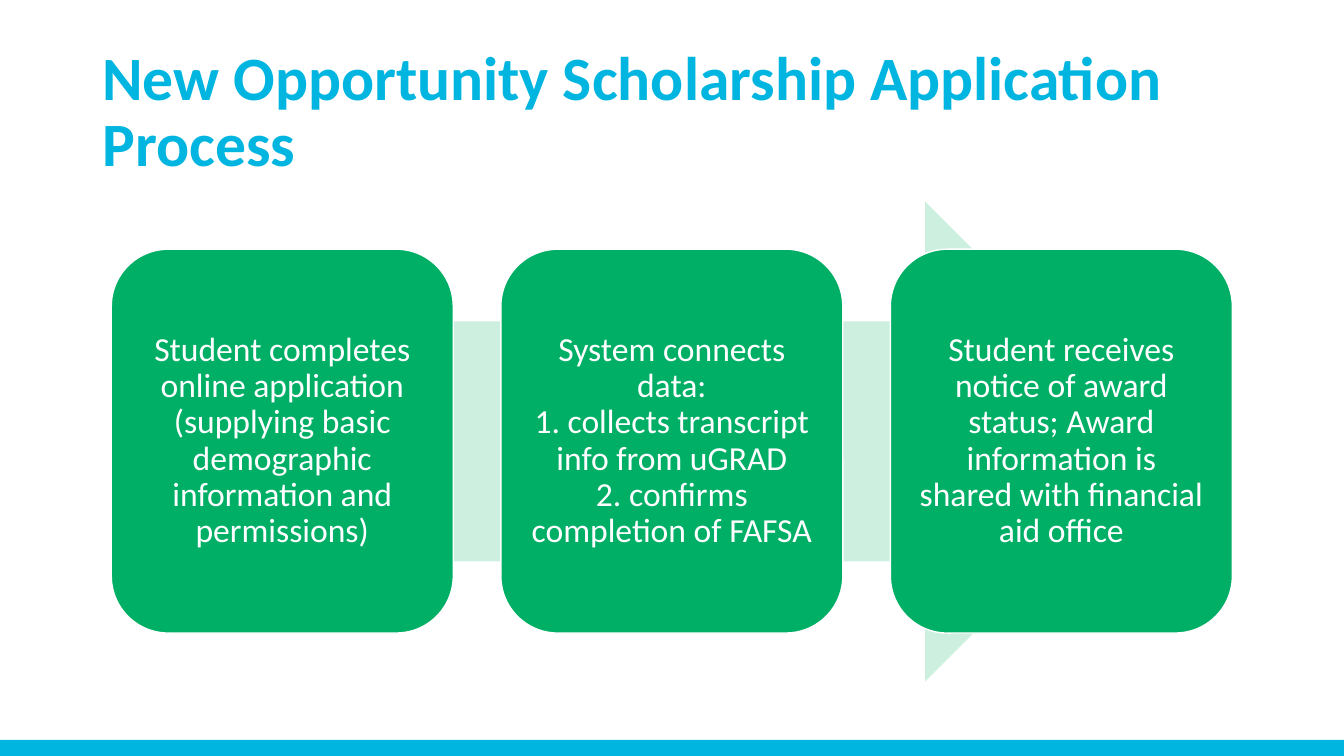
from dataclasses import dataclass

import lxml.etree
import pptx
import pptx.dml.color
import pptx.enum.shapes
import pptx.enum.text
import pptx.oxml.ns
import pptx.shapes.autoshape
import pptx.slide
import pptx.text.text
import pptx.util


@dataclass(frozen=True)
class Theme:
    font: str = "Calibri"
    blue: str = "00B5DF"
    green: str = "00AF66"
    white: str = "FFFFFF"
    title_size: float = 44
    step_size: float = 24
    line_spacing: float = 0.9
    arrow_opacity: int = 20


@dataclass(frozen=True)
class Box:
    left: float
    top: float
    width: float
    height: float


@dataclass(frozen=True)
class Step:
    lines: tuple[str, ...]


THEME = Theme()
SLIDE = Box(0, 0, 960, 540)
FOOTER_BAR = Box(0, 528.5, 960, 11.5)
TITLE = Box(66, 28.75, 828, 104.4)
ARROW = Box(128.2, 144, 704, 342.7)
FIRST_STEP = Box(79.5, 178, 244.3, 274.2)
STEP_PITCH = 278.25
STEP_INSET = 7.2

STEPS = (
    Step(("Student completes online application (supplying basic demographic information and permissions)",)),
    Step((
        "System connects data:",
        "1. collects transcript info from uGRAD",
        "2. confirms completion of FAFSA",
    )),
    Step(("Student receives notice of award status; Award information is shared with financial aid office",)),
)


def color(value: str) -> pptx.dml.color.RGBColor:
    return pptx.dml.color.RGBColor.from_string(value)


def add_filled_shape(
    slide: pptx.slide.Slide,
    kind: pptx.enum.shapes.MSO_SHAPE,
    box: Box,
    fill: str,
) -> pptx.shapes.autoshape.Shape:
    shape = slide.shapes.add_shape(
        kind,
        pptx.util.Pt(box.left),
        pptx.util.Pt(box.top),
        pptx.util.Pt(box.width),
        pptx.util.Pt(box.height),
    )
    shape.shadow.inherit = False
    shape.fill.solid()
    shape.fill.fore_color.rgb = color(fill)
    shape.line.fill.background()
    return shape


def set_opacity(shape: pptx.shapes.autoshape.Shape, percent: int) -> None:
    solid_fill = shape.element.spPr.find(pptx.oxml.ns.qn("a:solidFill"))
    fill_color = solid_fill.find(pptx.oxml.ns.qn("a:srgbClr"))
    alpha = lxml.etree.SubElement(fill_color, pptx.oxml.ns.qn("a:alpha"))
    alpha.set("val", str(percent * 1000))


def add_run(
    paragraph: pptx.text.text._Paragraph,
    text: str,
    size: float,
    text_color: str,
    bold: bool = False,
) -> None:
    run = paragraph.add_run()
    run.text = text
    run.font.name = THEME.font
    run.font.size = pptx.util.Pt(size)
    run.font.bold = bold
    run.font.color.rgb = color(text_color)


def set_title(slide: pptx.slide.Slide, text: str) -> None:
    title = slide.shapes.title
    title.left = pptx.util.Pt(TITLE.left)
    title.top = pptx.util.Pt(TITLE.top)
    title.width = pptx.util.Pt(TITLE.width)
    title.height = pptx.util.Pt(TITLE.height)
    frame = title.text_frame
    frame.word_wrap = True
    frame.auto_size = pptx.enum.text.MSO_AUTO_SIZE.NONE
    frame.vertical_anchor = pptx.enum.text.MSO_ANCHOR.MIDDLE
    paragraph = frame.paragraphs[0]
    paragraph.alignment = pptx.enum.text.PP_ALIGN.LEFT
    paragraph.line_spacing = THEME.line_spacing
    add_run(paragraph, text, THEME.title_size, THEME.blue, bold=True)


def add_step(slide: pptx.slide.Slide, step: Step, box: Box) -> None:
    shape = add_filled_shape(
        slide, pptx.enum.shapes.MSO_SHAPE.ROUNDED_RECTANGLE, box, THEME.green
    )
    shape.line.color.rgb = color(THEME.white)
    shape.line.width = pptx.util.Pt(1)
    frame = shape.text_frame
    frame.word_wrap = True
    frame.vertical_anchor = pptx.enum.text.MSO_ANCHOR.MIDDLE
    inset = pptx.util.Pt(STEP_INSET)
    frame.margin_left = frame.margin_right = inset
    frame.margin_top = frame.margin_bottom = inset
    paragraph = frame.paragraphs[0]
    paragraph.alignment = pptx.enum.text.PP_ALIGN.CENTER
    paragraph.line_spacing = THEME.line_spacing
    for index, line in enumerate(step.lines):
        if index:
            paragraph.add_line_break()
        add_run(paragraph, line, THEME.step_size, THEME.white)


def main() -> None:
    presentation = pptx.Presentation()
    presentation.slide_width = pptx.util.Pt(SLIDE.width)
    presentation.slide_height = pptx.util.Pt(SLIDE.height)
    title_only = presentation.slide_layouts.get_by_name("Title Only")
    slide = presentation.slides.add_slide(title_only)

    add_filled_shape(slide, pptx.enum.shapes.MSO_SHAPE.RECTANGLE, FOOTER_BAR, THEME.blue)
    set_title(slide, "New Opportunity Scholarship Application Process")
    arrow = add_filled_shape(
        slide, pptx.enum.shapes.MSO_SHAPE.RIGHT_ARROW, ARROW, THEME.green
    )
    set_opacity(arrow, THEME.arrow_opacity)
    for index, step in enumerate(STEPS):
        left = FIRST_STEP.left + index * STEP_PITCH
        add_step(slide, step, Box(left, FIRST_STEP.top, FIRST_STEP.width, FIRST_STEP.height))

    presentation.save("out.pptx")


if __name__ == "__main__":
    main()
